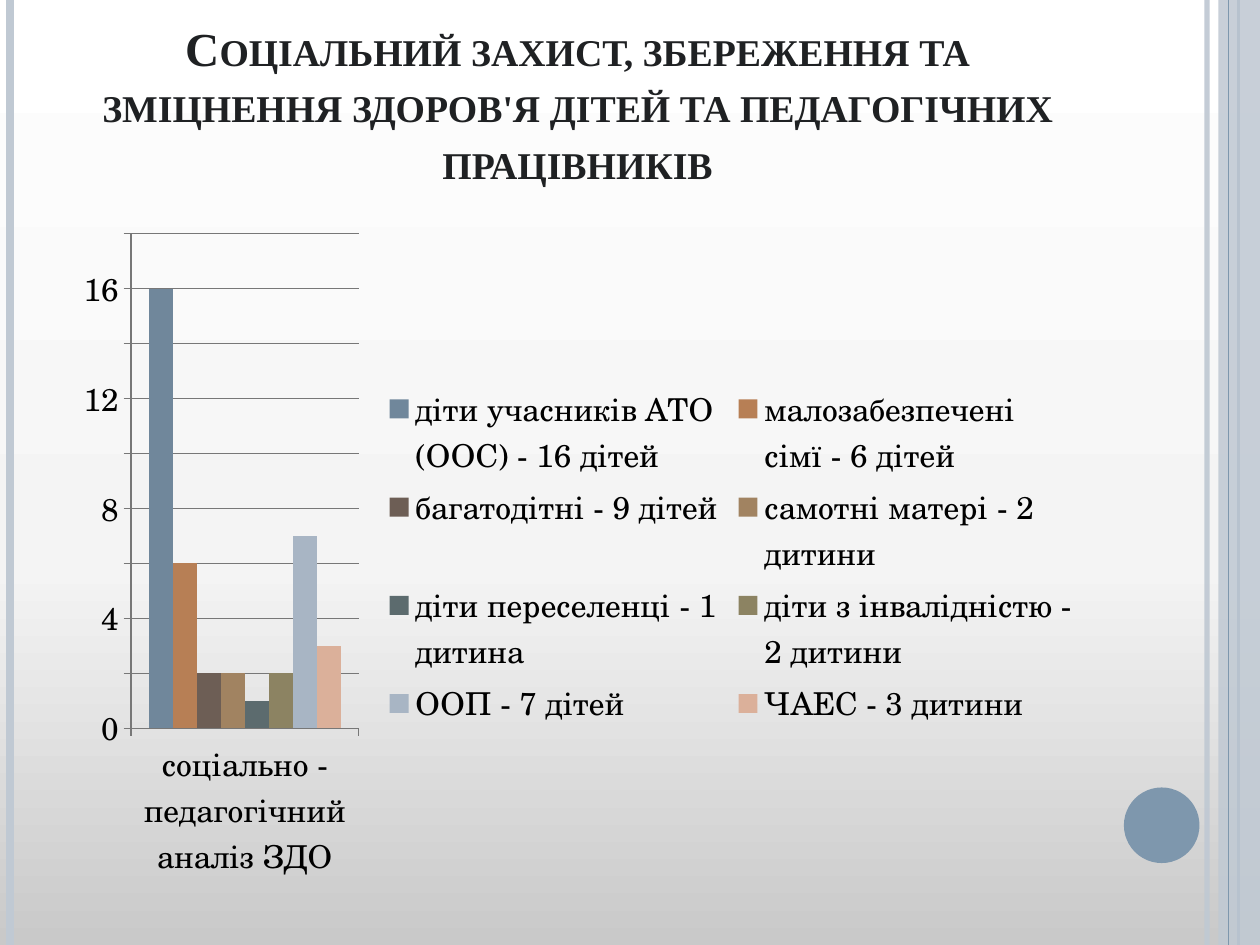
from lxml.etree import SubElement
from pptx import Presentation
from pptx.chart.data import CategoryChartData
from pptx.dml.color import RGBColor
from pptx.enum.chart import XL_CHART_TYPE, XL_LEGEND_POSITION, XL_TICK_MARK
from pptx.enum.shapes import MSO_CONNECTOR, MSO_SHAPE
from pptx.enum.text import MSO_ANCHOR, PP_ALIGN
from pptx.oxml.ns import qn
from pptx.util import Inches, Pt

TITLE = ("Соціальний захист, збереження та зміцнення здоров'я дітей "
         "та педагогічних працівників")
GROUP = "соціально - педагогічний аналіз ЗДО"
SERIES = [
    ("діти учасників АТО (ООС) - 16 дітей", 16, "70879B"),
    ("малозабезпечені сімї - 6 дітей", 6, "B77F55"),
    ("багатодітні - 9 дітей", 2, "6D5E55"),
    ("самотні матері - 2 дитини", 2, "A18361"),
    ("діти переселенці - 1 дитина", 1, "5C6B6E"),
    ("діти з інвалідністю - 2 дитини", 2, "8C8362"),
    ("ООП - 7 дітей", 7, "A8B5C4"),
    ("ЧАЕС - 3 дитини", 3, "DBB09A"),
]
RULES = [(9.58, "C0C9D3", 3, 93), (0.08, "C0C9D3", 4.5, 100),
         (9.83, "7E97AD", 1.5, 100)]


def color(text):
    return RGBColor.from_string(text)


def assign(item, values):
    for name, value in values.items():
        setattr(item, name, value)


def fade(fill, alpha):
    if alpha < 100:
        tint = fill._xPr.find(qn("a:solidFill"))[0]
        SubElement(tint, qn("a:alpha"), val=str(alpha * 1000))


class Deck:
    font = {"name": "TeX Gyre Schola", "size": Pt(18)}
    head = {"name": "Times New Roman", "size": Pt(27), "bold": True}
    axis = "777777"

    def __init__(self):
        self.show = Presentation()
        assign(self.show, {"slide_width": Inches(10), "slide_height": Inches(7.5)})
        self.slide = self.show.slides.add_slide(self.show.slide_layouts[6])
        self.shapes = self.slide.shapes

    def back(self, stops, angle):
        fill = self.slide.background.fill
        fill.gradient()
        fill.gradient_angle = angle
        group = fill._xPr.find(qn("a:gradFill")).find(qn("a:gsLst"))
        for stop in list(group):
            group.remove(stop)
        for spot, tint in stops:
            stop = SubElement(group, qn("a:gs"), pos=str(spot * 1000))
            SubElement(stop, qn("a:srgbClr"), val=tint)

    def rule(self, left, tint, width, alpha=100):
        line = self.shapes.add_connector(
            MSO_CONNECTOR.STRAIGHT, Inches(left), 0, Inches(left), Inches(7.5))
        line.line.width = Pt(width)
        line.line.color.rgb = color(tint)
        fade(line.line.fill, alpha)
        SubElement(line._element.spPr, qn("a:effectLst"))

    def shape(self, kind, box, tint, alpha=100):
        item = self.shapes.add_shape(kind, *map(Inches, box))
        item.shadow.inherit = False
        item.fill.solid()
        item.fill.fore_color.rgb = color(tint)
        fade(item.fill, alpha)
        item.line.fill.background()

    def title(self, text, box):
        frame = self.shapes.add_textbox(*map(Inches, box)).text_frame
        assign(frame, {"word_wrap": True, "vertical_anchor": MSO_ANCHOR.BOTTOM})
        para = frame.paragraphs[0]
        para.alignment = PP_ALIGN.CENTER
        run = para.add_run()
        run.text = text
        assign(run.font, self.head)
        run.font.color.rgb = color("1F2123")
        run._r.get_or_add_rPr().set("cap", "small")

    def chart(self, group, rows, box):
        data = CategoryChartData()
        data.categories = [group]
        for name, value, _ in rows:
            data.add_series(name, [value])
        chart = self.shapes.add_chart(
            XL_CHART_TYPE.COLUMN_CLUSTERED, *map(Inches, box), data).chart
        assign(chart, {"has_title": False, "has_legend": True})
        assign(chart.font, self.font)
        chart.font.color.rgb = color("000000")
        assign(chart.legend, {"position": XL_LEGEND_POSITION.RIGHT,
                              "include_in_layout": False})
        plot = chart.plots[0]
        assign(plot, {"gap_width": 150, "overlap": 0, "vary_by_categories": False})
        for item, (_, _, tint) in zip(plot.series, rows):
            item.format.fill.solid()
            item.format.fill.fore_color.rgb = color(tint)
        scale = chart.value_axis
        scale.has_major_gridlines = True
        for axis in (scale, chart.category_axis):
            axis.major_tick_mark = XL_TICK_MARK.OUTSIDE
            axis.format.line.color.rgb = color(self.axis)
        scale.major_gridlines.format.line.color.rgb = color(self.axis)


def main():
    deck = Deck()
    deck.back([(0, "C9C9C9"), (40, "F4F4F4"), (100, "FFFFFF")], 90)
    for rule in RULES:
        deck.rule(*rule)
    deck.shape(MSO_SHAPE.RECTANGLE, (9.67, 0, 0.33, 7.5), "C0C9D3", 87)
    deck.rule(9.75, "7E97AD", 0.75)
    deck.shape(MSO_SHAPE.OVAL, (8.92, 6.25, 0.6, 0.6), "7E97AD")
    deck.title(TITLE, (0.5, 0.3, 8.17, 1.25))
    deck.chart(GROUP, SERIES, (0.5, 1.75, 8.17, 5.33))
    deck.show.save("out.pptx")


if __name__ == "__main__":
    main()
